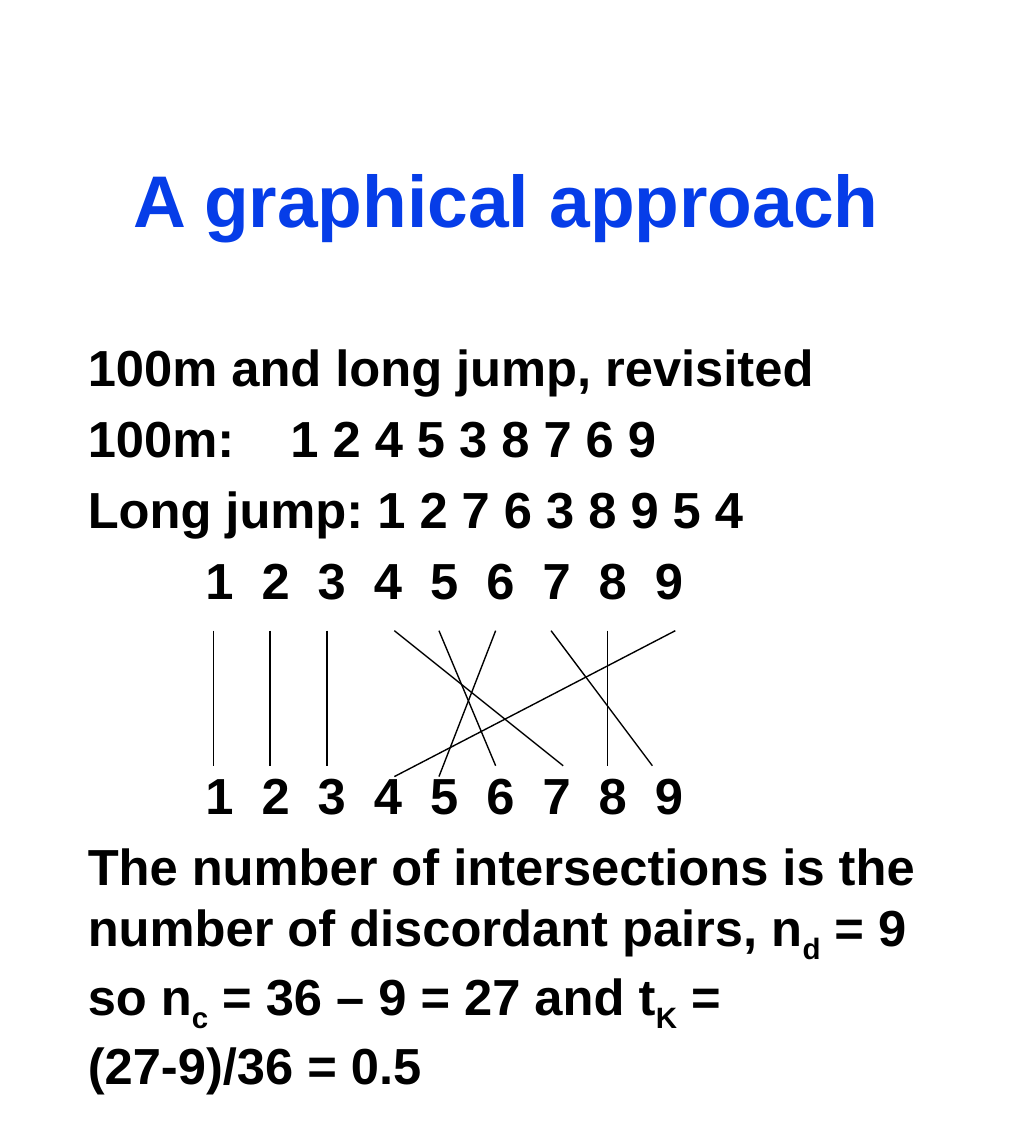
from dataclasses import dataclass

from lxml import etree
from pptx import Presentation
from pptx import util as u
from pptx.dml.color import RGBColor
from pptx.enum import shapes, text
from pptx.oxml import ns


@dataclass(frozen=True)
class Theme:
    font: str = "Arial"
    title_color: str = "063DE8"
    ink: str = "000000"
    title_size: float = 39
    body_size: float = 27
    line_width: float = 0.75
    subscript: str = "-25000"


class SlideBuilder:
    """Adds styled elements to the current slide."""

    def __init__(self, page, theme):
        self.page = page
        self.theme = theme

    def place(self, box, left, top, width, height, anchor):
        for name, value in zip(("left", "top", "width", "height"), (left, top, width, height)):
            setattr(box, name, u.Inches(value))
        frame_format = {
            "margin_left": u.Inches(0.09), "margin_right": u.Inches(0.09),
            "margin_top": u.Inches(0.04), "margin_bottom": u.Inches(0.04),
            "word_wrap": True, "auto_size": text.MSO_AUTO_SIZE.NONE,
            "vertical_anchor": anchor,
        }
        for name, value in frame_format.items():
            setattr(box.text_frame, name, value)

    def span(self, para, words, size, color, lowered=False):
        span = para.add_run()
        span.text = words
        for name, value in {"name": self.theme.font, "size": u.Pt(size), "bold": True}.items():
            setattr(span.font, name, value)
        span.font.color.rgb = RGBColor.from_string(color)
        if lowered:
            span._r.get_or_add_rPr().set("baseline", self.theme.subscript)

    def title(self, words, *bounds):
        box = self.page.shapes.title
        self.place(box, *bounds, text.MSO_ANCHOR.MIDDLE)
        para = box.text_frame.paragraphs[0]
        para.alignment = text.PP_ALIGN.CENTER
        self.span(para, words, self.theme.title_size, self.theme.title_color)

    def body(self, entries, *bounds):
        box = self.page.placeholders[1]
        self.place(box, *bounds, text.MSO_ANCHOR.TOP)
        for index, (pieces, layout) in enumerate(entries):
            frame = box.text_frame
            para = frame.add_paragraph() if index else frame.paragraphs[0]
            self.arrange(para, **layout)
            for position, words in enumerate(pieces):
                self.span(para, words, self.theme.body_size, self.theme.ink, position % 2 == 1)

    def arrange(self, para, indent=0, before=None, tab=None):
        if before is not None:
            para.space_before = u.Pt(before)
        props = para._p.get_or_add_pPr()
        props.set("marL", str(u.Inches(indent)))
        props.set("indent", "0")
        etree.SubElement(props, ns.qn("a:buNone"))
        if tab is not None:
            stops = etree.SubElement(props, ns.qn("a:tabLst"))
            etree.SubElement(stops, ns.qn("a:tab"), pos=str(u.Inches(tab)), algn="l")

    def line(self, *ends):
        line = self.page.shapes.add_connector(
            shapes.MSO_CONNECTOR.STRAIGHT, *(u.Inches(end) for end in ends))
        line.line.color.rgb = RGBColor.from_string(self.theme.ink)
        line.line.width = u.Pt(self.theme.line_width)
        etree.SubElement(line._element.spPr, ns.qn("a:effectLst"))


def main():
    deck = Presentation()
    deck.slide_width, deck.slide_height = u.Inches(7.5), u.Inches(8.5)
    builder = SlideBuilder(deck.slides.add_slide(deck.slide_layouts[1]), Theme())

    ranks = "  ".join(str(rank) for rank in range(1, 10))
    conclusion = ["The number of intersections is the number of discordant pairs, n", "d",
                  " = 9 so n", "c", " = 36 – 9 = 27 and t", "K", " = (27-9)/36 = 0.5"]
    builder.title("A graphical approach", 0.56, 0.76, 6.38, 1.41)
    builder.body([
        (["100m and long jump, revisited"], {}),
        (["100m:\t1 2 4 5 3 8 7 6 9"], {"tab": 2.12}),
        (["Long jump: 1 2 7 6 3 8 9 5 4"], {}),
        ([ranks], {"indent": 0.87}),
        ([ranks], {"indent": 0.87, "before": 82}),
        (conclusion, {}),
    ], 0.56, 2.45, 6.38, 5.09)

    top, bottom, low_bottom = 4.67, 5.67, 5.75
    rank_links = [
        (1.58, 1.58, bottom), (2, 2, bottom), (2.42, 2.42, bottom),
        (2.92, 4.17, bottom), (3.25, 3.67, bottom), (3.67, 3.25, low_bottom),
        (4.08, 4.83, bottom), (4.5, 4.5, bottom), (5, 2.92, low_bottom),
    ]
    for start, end, foot in rank_links:
        builder.line(start, top, end, foot)

    deck.save("out.pptx")


if __name__ == "__main__":
    main()
